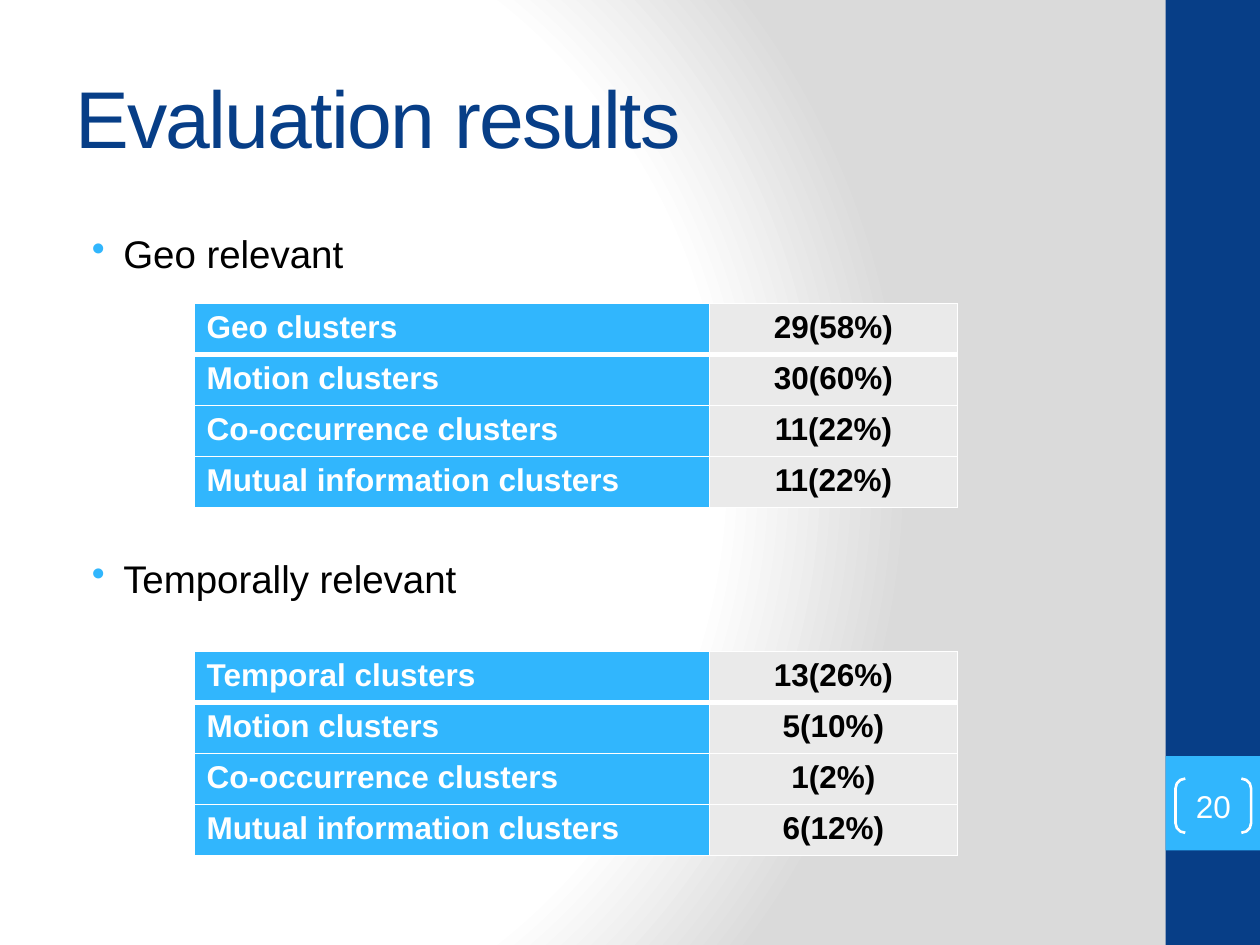
from lxml.etree import SubElement
from pptx import Presentation
from pptx.dml.color import RGBColor
from pptx.enum.shapes import MSO_SHAPE
from pptx.enum.text import MSO_ANCHOR, PP_ALIGN
from pptx.oxml import parse_xml
from pptx.oxml.ns import nsdecls, qn
from pptx.util import Inches, Pt

RECT, BRACKET = MSO_SHAPE.RECTANGLE, MSO_SHAPE.DOUBLE_BRACKET
MIDDLE, TOP = MSO_ANCHOR.MIDDLE, MSO_ANCHOR.TOP
LEFT, CENTER = PP_ALIGN.LEFT, PP_ALIGN.CENTER
NAVY, SKY, WHITE, BLACK = "073E87", "31B6FD", "FFFFFF", "000000"
PALE, GRAY = "EAEAEA", "DADADA"


def color(code):
    return RGBColor.from_string(code)


class Deck:
    """Holds the style and the current slide, on a grid of 40 columns by 30 rows."""

    face = "Arial"

    def __init__(self, wide=10, high=7.5):
        self.show = Presentation()
        self.show.slide_width, self.show.slide_height = Inches(wide), Inches(high)
        self.col = self.show.slide_width / 40
        self.row = self.show.slide_height / 30
        self.slide = self.show.slides.add_slide(self.show.slide_layouts[6])

    def place(self, x, y, w, h):
        return (round(x * self.col), round(y * self.row),
                round(w * self.col), round(h * self.row))

    def style(self, para, size, code, bold=False, align=LEFT):
        para.alignment = align
        font = para.font
        font.name, font.size, font.bold = self.face, Pt(size), bold
        font.color.rgb = color(code)

    def glow(self, stops):
        marks = "".join(
            f'<a:gs pos="{pos * 1000}"><a:srgbClr val="{code}"/></a:gs>'
            for pos, code in stops)
        back = parse_xml(
            f'<p:bg {nsdecls("p", "a")}><p:bgPr><a:gradFill rotWithShape="1">'
            f'<a:gsLst>{marks}</a:gsLst><a:path path="circle">'
            '<a:fillToRect l="20000" t="50000" r="100000" b="50000"/></a:path>'
            '</a:gradFill><a:effectLst/></p:bgPr></p:bg>')
        self.slide.element.cSld.insert(0, back)

    def block(self, box, code):
        shape = self.slide.shapes.add_shape(RECT, *self.place(*box))
        shape.shadow.inherit = False
        shape.fill.solid()
        shape.fill.fore_color.rgb = color(code)
        shape.line.fill.background()

    def badge(self, box, text):
        shape = self.slide.shapes.add_shape(BRACKET, *self.place(*box))
        shape.shadow.inherit = False
        shape.adjustments[0] = 0.18
        shape.fill.background()
        shape.line.color.rgb = color(WHITE)
        shape.line.width = Pt(1.5)
        frame = shape.text_frame
        frame.margin_left = frame.margin_right = 0
        frame.margin_top = frame.margin_bottom = 0
        frame.vertical_anchor = MIDDLE
        frame.text = text
        self.style(frame.paragraphs[0], 18, WHITE, align=CENTER)

    def text(self, box, anchor):
        frame = self.slide.shapes.add_textbox(*self.place(*box)).text_frame
        frame.word_wrap = True
        frame.vertical_anchor = anchor
        return frame

    def title(self, box, text):
        frame = self.text(box, MIDDLE)
        para = frame.paragraphs[0]
        run = para.add_run()
        run.text = text
        run.font._element.set("spc", "-100")
        self.style(para, 46, NAVY)

    def bullets(self, box, items, gap):
        frame = self.text(box, TOP)
        for i, item in enumerate(items):
            para = frame.add_paragraph() if i else frame.paragraphs[0]
            para.text = item
            if i:
                para.space_before = Pt(gap)
            props = para._p.get_or_add_pPr()
            props.set("marL", str(Inches(0.38)))
            props.set("indent", str(Inches(-0.25)))
            tint = SubElement(props, qn("a:buClr"))
            SubElement(tint, qn("a:srgbClr"), val=SKY)
            SubElement(props, qn("a:buChar"), char="•")
            self.style(para, 22, BLACK)

    def edge(self, cell, side, width):
        line = SubElement(cell._tc.get_or_add_tcPr(), qn(f"a:ln{side}"),
                          w=str(Pt(width)))
        fill = SubElement(line, qn("a:solidFill"))
        SubElement(fill, qn("a:srgbClr"), val=WHITE)

    def table(self, x, y, widths, high, rows):
        box = self.place(x, y, sum(widths), high * len(rows))
        table = self.slide.shapes.add_table(len(rows), len(widths), *box).table
        table.first_row = table.horz_banding = False
        for part, width in zip(table.columns, widths):
            part.width = round(width * self.col)
        looks = ((SKY, WHITE, LEFT), (PALE, BLACK, CENTER))
        for r, row in enumerate(rows):
            for c, (word, (fill, ink, align)) in enumerate(zip(row, looks)):
                cell = table.cell(r, c)
                cell.text = word
                self.style(cell.text_frame.paragraphs[0], 18, ink, True, align)
                for side in "LRTB":
                    thick = (r, side) in ((0, "B"), (1, "T"))
                    self.edge(cell, side, 3 if thick else 1)
                cell.fill.solid()
                cell.fill.fore_color.rgb = color(fill)


def main():
    deck = Deck()
    deck.glow([(0, WHITE), (75, WHITE), (100, GRAY)])
    deck.block((37, 0, 3, 30), NAVY)
    deck.block((37, 24, 3, 3), SKY)
    deck.title((2, 1.2, 33.33, 5), "Evaluation results")
    deck.bullets((2, 7.12, 33.33, 21), ["Geo relevant", "Temporally relevant"], 159)
    deck.badge((37.32, 24.72, 2.4, 1.72), "20")
    names = ["Motion clusters", "Co-occurrence clusters", "Mutual information clusters"]
    groups = [
        (9.64, "Geo clusters", ["29(58%)", "30(60%)", "11(22%)", "11(22%)"]),
        (20.68, "Temporal clusters", ["13(26%)", "5(10%)", "1(2%)", "6(12%)"]),
    ]
    for top, first, values in groups:
        deck.table(6.16, top, (16.36, 7.88), 1.62, list(zip([first] + names, values)))
    deck.show.save("out.pptx")


if __name__ == "__main__":
    main()
